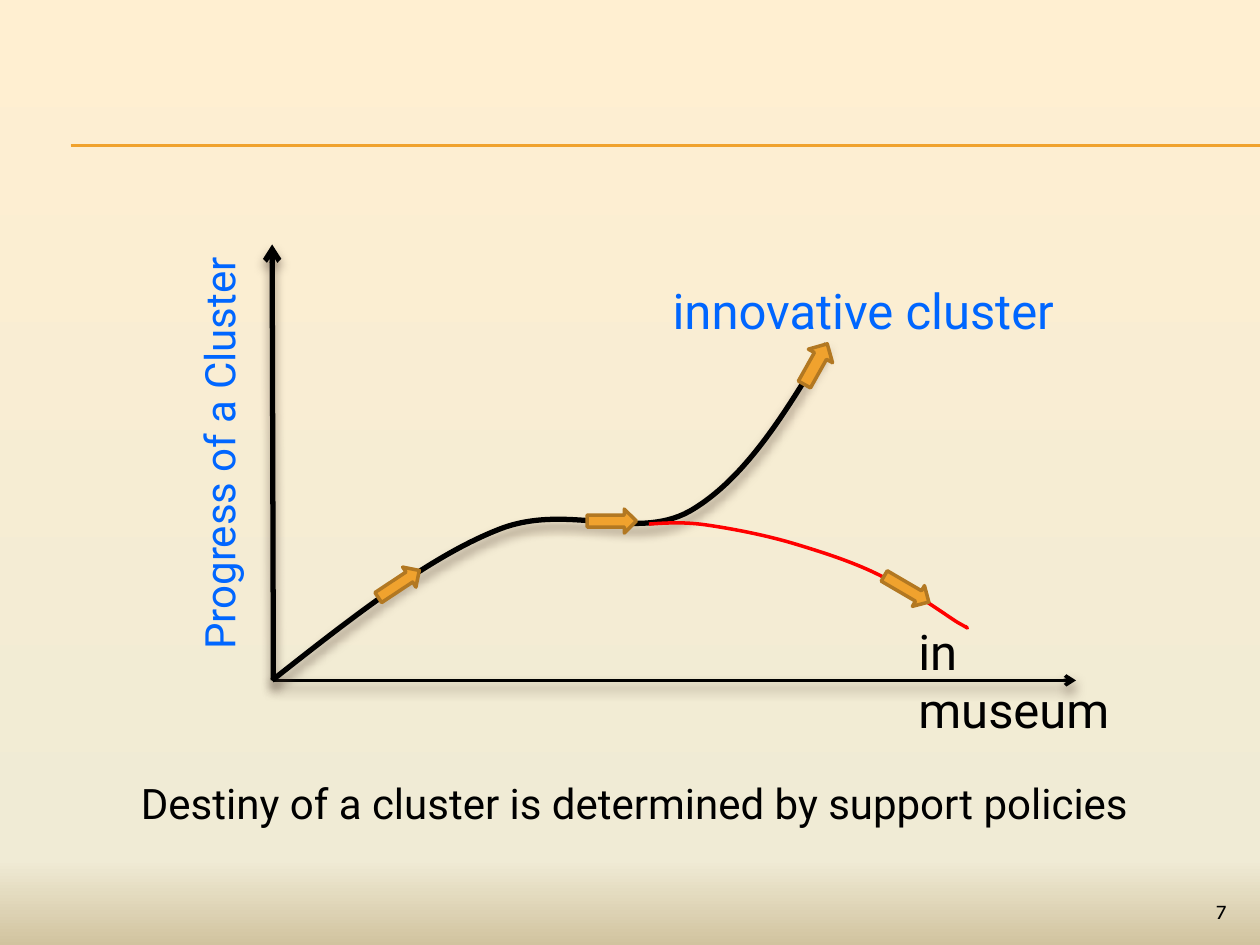
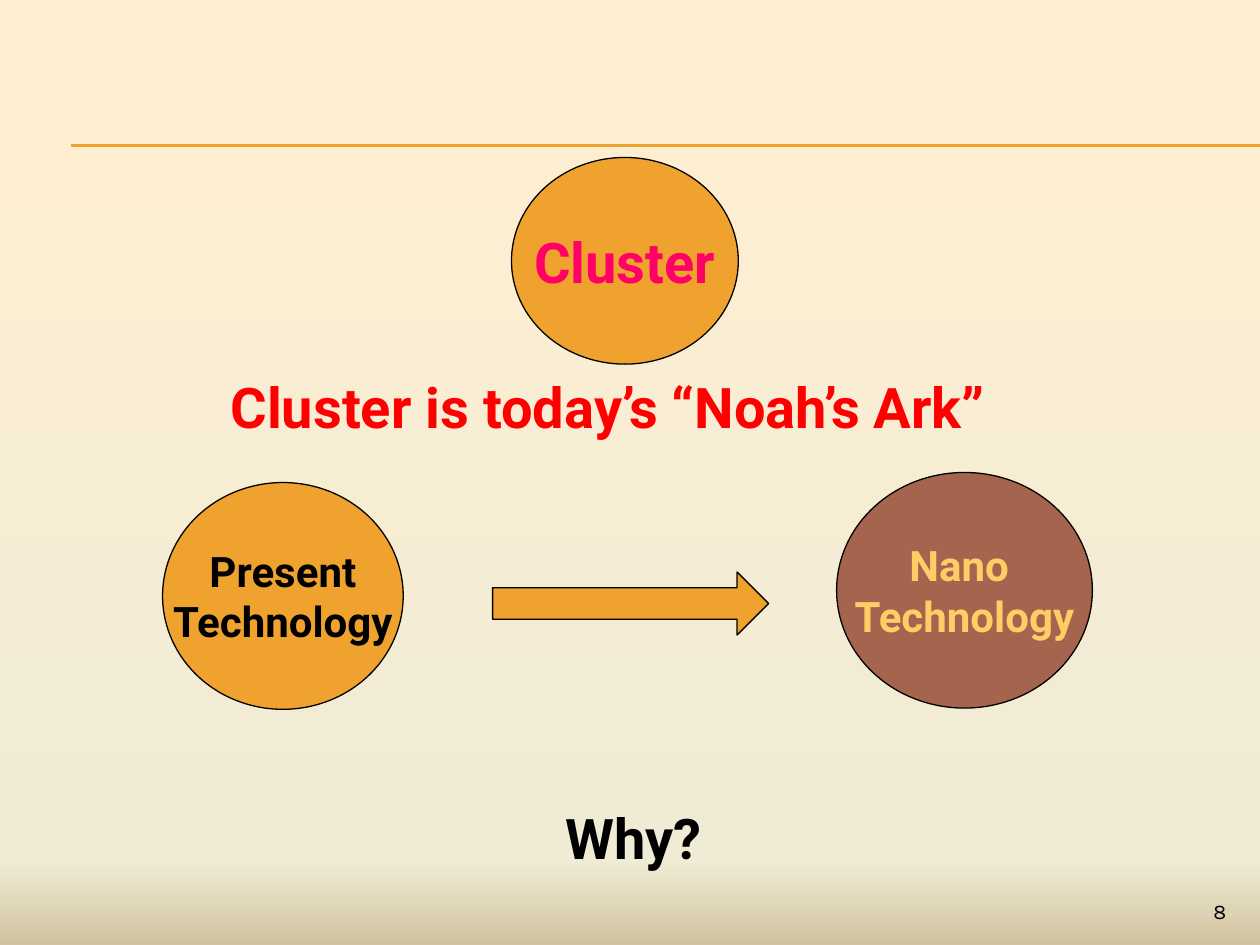
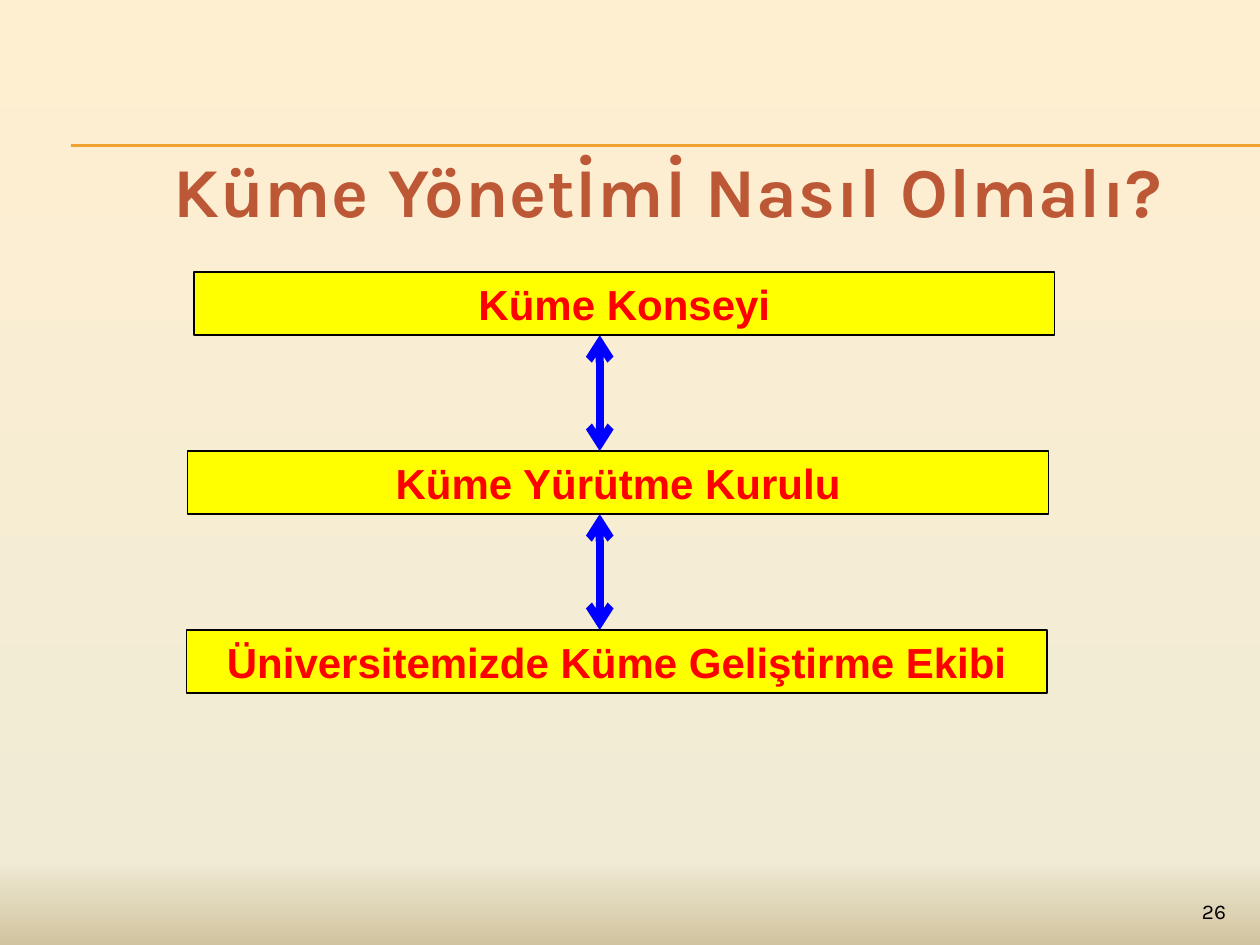
from copy import deepcopy

from lxml import etree
from pptx import Presentation
from pptx import util as u
from pptx.dml.color import RGBColor
from pptx.enum import shapes, text
from pptx.oxml.ns import qn

hue = RGBColor.from_string
BLACK, RED, BLUE = "000000", "FF0000", "0066FF"
AMBER, BROWN, SHADE = "F0A22E", "B27822", "4E3B30"
KIND, STRAIGHT = shapes.MSO_SHAPE, shapes.MSO_CONNECTOR.STRAIGHT
LEFT, MID, RIGHT = text.PP_ALIGN.LEFT, text.PP_ALIGN.CENTER, text.PP_ALIGN.RIGHT
CENTRED = {"vertical_anchor": text.MSO_ANCHOR.MIDDLE}


def style(item, line, width, fill=None, ends=(), shadow=False):
    """Set line, fill, arrowheads and shadow of a shape or connector."""
    item.line.color.rgb = hue(line)
    item.line.width = u.Pt(width)
    if fill:
        item.fill.solid()
        item.fill.fore_color.rgb = hue(fill)
    props = item.element.spPr
    for end in ends:
        etree.SubElement(props.find(qn("a:ln")), qn(f"a:{end}"), type="arrow")
    effects = etree.SubElement(props, qn("a:effectLst"))
    if shadow:
        outer = etree.SubElement(effects, qn("a:outerShdw"), blurRad=str(u.Pt(6)),
                                 dist=str(u.Pt(4)), dir="5400000", rotWithShape="0")
        tint = etree.SubElement(outer, qn("a:srgbClr"), val=SHADE)
        etree.SubElement(tint, qn("a:alpha"), val="60000")


def write(item, words, size, color, name="Roboto", bold=False, align=LEFT, **frame):
    """Fill a shape with text, one paragraph a line; frame holds text frame values."""
    body = item.text_frame
    for key, value in {"word_wrap": True, **frame}.items():
        setattr(body, key, value)
    body.text = words
    for para in body.paragraphs:
        para.alignment = align
        font = para.runs[0].font
        for key, value in {"size": u.Pt(size), "name": name, "bold": bold}.items():
            setattr(font, key, value)
        font.color.rgb = hue(color)


deck = Presentation()
deck.slide_width, deck.slide_height = u.Inches(10), u.Inches(7.5)
master = deck.slide_master

# Shared background, page numbers and rules
back = master.background.fill
back.gradient()
back.gradient_angle = 270
stops = master.element.xpath(".//p:bg//a:gsLst")[0]
while len(stops) > 2:
    stops.remove(stops[-1])
stops.append(deepcopy(stops[0]))
for stop, (place, color) in zip(back.gradient_stops,
                                [(0, "FFEFD1"), (0.91, "F0EBD5"), (1, "D1C39F")]):
    stop.position = place
    stop.color.rgb = hue(color)

pages = [deck.slides.add_slide(deck.slide_layouts[6]).shapes for _ in range(3)]
fate, ark, board = pages
for page, number in zip(pages, ("7", "8", "26")):
    box = page.add_textbox(*map(u.Inches, (9, 7.08, 0.83, 0.27)))
    write(box, number, 12, BLACK, "Karla", align=RIGHT)

for y in (1.15, 1.16):
    rule = fate.add_connector(STRAIGHT, *map(u.Inches, (0.56, y, 10, y)))
    style(rule, AMBER, 0.75)
    master.element.cSld.spTree.append(rule.element)  # moves it to the master

# Slide 1: two fates of a cluster
for tip, width in (((2.16, 1.94), 3), ((8.54, 5.4), 2)):
    axis = fate.add_connector(STRAIGHT, *map(u.Inches, (2.17, 5.4, *tip)))
    style(axis, BLACK, width, ends=["tailEnd"], shadow=True)

# Each curve is a chain of cubic Bezier pieces: start, then two handles and an end
rise = [(2.16, 5.4), (2.77, 4.92), (3.39, 4.43), (3.94, 4.21), (4.49, 3.98),
        (5.03, 4.3), (5.47, 4.06), (5.91, 3.81), (6.24, 3.27), (6.56, 2.73)]
fall = [(5.15, 4.16), (5.29, 4.15), (5.44, 4.14), (5.63, 4.17), (5.83, 4.2),
        (6.09, 4.25), (6.32, 4.32), (6.55, 4.39), (6.8, 4.47), (7.01, 4.58),
        (7.23, 4.68), (7.49, 4.87), (7.6, 4.94), (7.71, 5), (7.68, 4.99), (7.66, 4.97)]
for knots, color, width, shadow in ((rise, BLACK, 3, True), (fall, RED, 2, False)):
    start, *rest = [tuple(map(u.Inches, knot)) for knot in knots]
    pen = fate.build_freeform(*start)
    pen.add_line_segments(rest, close=False)
    curve = pen.convert_to_shape()
    lines = curve.element.xpath(".//a:lnTo")
    for i in range(0, len(lines), 3):
        bend = etree.Element(qn("a:cubicBezTo"))
        lines[i].addprevious(bend)
        for line in lines[i:i + 3]:
            bend.append(line[0])
            line.getparent().remove(line)
    curve.fill.background()
    style(curve, color, width, shadow=shadow)

for *place, turn in ((2.97, 4.54, 0.39, 0.19, 326.5), (4.66, 4.04, 0.39, 0.19, 0),
                     (6.29, 2.78, 0.37, 0.22, 299.3), (6.99, 4.58, 0.41, 0.19, 30.3)):
    arrow = fate.add_shape(KIND.RIGHT_ARROW, *map(u.Inches, place))
    arrow.rotation = turn
    style(arrow, BROWN, 2, AMBER)

for words, place, size, color, turn in (
        ("innovative cluster", (5.24, 2.18, 3.23, 0.57), 28, BLUE, 0),
        ("in museum", (7.19, 4.88, 2.11, 0.57), 28, BLACK, 0),
        ("Progress of a Cluster", (0.04, 3.31, 3.39, 0.5), 24, BLUE, 270),
        ("Destiny of a cluster is determined by support policies",
         (1.02, 6.12, 8.17, 0.5), 24, BLACK, 0)):
    label = fate.add_textbox(*map(u.Inches, place))
    label.rotation = turn
    write(label, words, size, color)

# Slide 2: from present to nano technology
bare = dict.fromkeys(("margin_left", "margin_top", "margin_right", "margin_bottom"), 0)
for words, place, fill, size, color in (
        ("Nano \nTechnology", (6.64, 3.75, 2.03, 1.87), "A5644E", 24, "FFCC66"),
        ("Cluster", (4.06, 1.25, 1.8, 1.64), AMBER, 32, "FF0066"),
        ("Present\nTechnology", (1.29, 3.83, 1.91, 1.8), AMBER, 24, BLACK)):
    disc = ark.add_shape(KIND.OVAL, *map(u.Inches, place))
    style(disc, BLACK, 0.75, fill)
    write(disc, words, size, color, bold=True, align=MID, word_wrap=False,
          **CENTRED, **bare)

arrow = ark.add_shape(KIND.RIGHT_ARROW, *map(u.Inches, (3.91, 4.54, 2.19, 0.5)))
style(arrow, BLACK, 0.75, AMBER)

for words, place, color, align in (
        ("Cluster is today’s “Noah’s Ark”", (1.73, 2.91, 7.07, 0.64), RED, LEFT),
        ("Why?", (4.3, 6.33, 1.46, 0.64), BLACK, MID)):
    label = ark.add_textbox(*map(u.Inches, place))
    write(label, words, 32, color, bold=True, align=align)

# Slide 3: management levels
title = board.add_textbox(*map(u.Inches, (1.28, 1.08, 8.52, 0.85)))
write(title, "Küme Yönetİmİ Nasıl Olmalı?", 40, "BD5836", "Karla", True, **CENTRED)
title.element.xpath(".//a:rPr")[0].set("spc", "50")

TOP, PITCH, TALL = 2.16, 1.42, 0.5
for i, (words, x) in enumerate((("Küme Konseyi", 1.54), ("Küme Yürütme Kurulu", 1.49),
                                ("Üniversitemizde Küme Geliştirme Ekibi", 1.48))):
    y = TOP + i * PITCH
    level = board.add_shape(KIND.RECTANGLE, *map(u.Inches, (x, y, 6.83, TALL)))
    style(level, BLACK, 0.75, "FFFF00")
    write(level, words, 24, RED, "Arial", True, MID, word_wrap=False, **CENTRED)
    if i:
        link = board.add_connector(STRAIGHT,
                                   *map(u.Inches, (4.76, y - PITCH + TALL, 4.76, y)))
        style(link, "0000FF", 4.5, ends=["headEnd", "tailEnd"])

deck.save("out.pptx")
